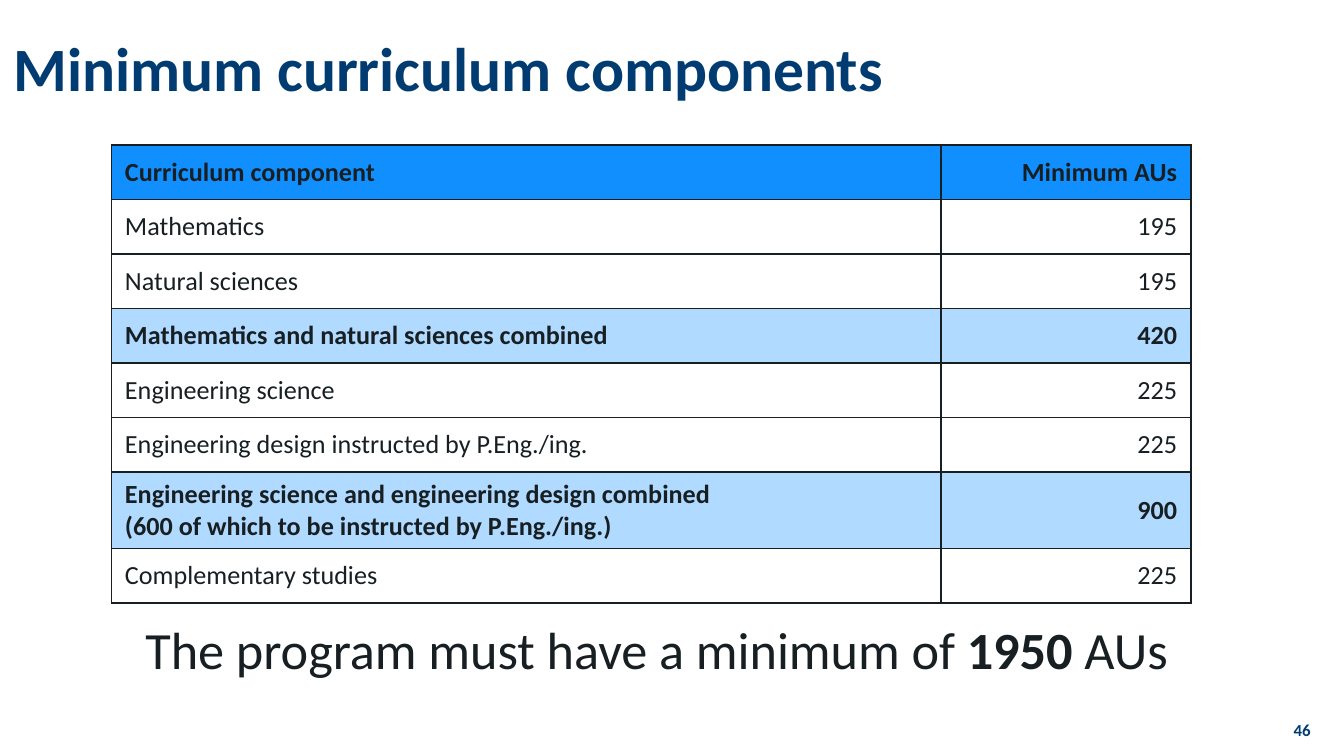
from lxml.etree import SubElement
from pptx import Presentation
from pptx.dml.color import RGBColor
from pptx.enum.text import MSO_ANCHOR as Anchor, PP_ALIGN as Align
from pptx.oxml.ns import qn
from pptx.util import Inches, Pt

NAVY = RGBColor(0x00, 0x3C, 0x71)
INK = RGBColor(0x17, 0x1F, 0x23)
HEADER_BLUE = RGBColor(0x11, 0x8F, 0xFF)
TOTAL_BLUE = RGBColor(0xB0, 0xDA, 0xFF)
WHITE = RGBColor(0xFF, 0xFF, 0xFF)

COMPONENTS = [
    ("Curriculum component", "Minimum AUs", HEADER_BLUE),
    ("Mathematics", "195", WHITE),
    ("Natural sciences", "195", WHITE),
    ("Mathematics and natural sciences combined", "420", TOTAL_BLUE),
    ("Engineering science", "225", WHITE),
    ("Engineering design instructed by P.Eng./ing.", "225", WHITE),
    ("Engineering science and engineering design combined\n"
     "(600 of which to be instructed by P.Eng./ing.)", "900", TOTAL_BLUE),
    ("Complementary studies", "225", WHITE),
]


def style(paragraph, size, color, bold=None, align=Align.LEFT):
    paragraph.alignment = align
    font = paragraph.font
    font.name = "Calibri"
    font.size = Pt(size)
    font.color.rgb = color
    font.bold = bold


def add_text(slide, box, runs, size, color, align=Align.LEFT,
             anchor=Anchor.MIDDLE, line_spacing=1.0):
    shape = slide.shapes.add_textbox(*map(Inches, box))
    frame = shape.text_frame
    frame.word_wrap = True
    frame.vertical_anchor = anchor
    paragraph = frame.paragraphs[0]
    paragraph.line_spacing = line_spacing
    style(paragraph, size, color, align=align)
    for text, bold in runs:
        run = paragraph.add_run()
        run.text = text
        run.font.bold = bold


def add_borders(cell):
    properties = cell._tc.get_or_add_tcPr()
    for index, side in enumerate(("lnL", "lnR", "lnT", "lnB")):
        line = properties.makeelement(qn(f"a:{side}"), {"w": str(Pt(1))})
        fill = SubElement(line, qn("a:solidFill"))
        SubElement(fill, qn("a:srgbClr"), val=str(INK))
        properties.insert(index, line)


def fill_cell(cell, text, fill, align):
    cell.text = text
    cell.vertical_anchor = Anchor.MIDDLE
    cell.fill.solid()
    cell.fill.fore_color.rgb = fill
    for paragraph in cell.text_frame.paragraphs:
        style(paragraph, 14, INK, fill != WHITE, align)
    add_borders(cell)


def add_component_table(slide):
    frame = slide.shapes.add_table(
        len(COMPONENTS), 2, Inches(0.83), Inches(1.08), Inches(8.03), Inches(3.41))
    table = frame.table
    table.columns[0].width = Inches(6.17)
    table.columns[1].width = Inches(1.86)
    two_line_height = Inches(0.57)
    one_line_height = (Inches(3.41) - two_line_height) // (len(COMPONENTS) - 1)
    for index, (component, units, fill) in enumerate(COMPONENTS):
        table.rows[index].height = two_line_height if "\n" in component else one_line_height
        fill_cell(table.cell(index, 0), component, fill, Align.LEFT)
        fill_cell(table.cell(index, 1), units, fill, Align.RIGHT)


def main():
    presentation = Presentation()
    presentation.slide_width = Inches(10)
    presentation.slide_height = Inches(10 * 9 / 16)
    slide = presentation.slides.add_slide(presentation.slide_layouts[6])
    add_text(slide, (0, 0.06, 10, 0.94), [("Minimum curriculum components", True)],
             33, NAVY, line_spacing=0.9)
    add_component_table(slide)
    add_text(slide, (0.28, 4.48, 9.21, 0.69),
             [("The program must have a minimum of ", False), ("1950", True), (" AUs", False)],
             28, INK, Align.CENTER, Anchor.TOP, 1.14)
    add_text(slide, (9.49, 5.35, 0.36, 0.16), [("46", True)], 9, NAVY, Align.RIGHT)
    presentation.save("out.pptx")


if __name__ == "__main__":
    main()
